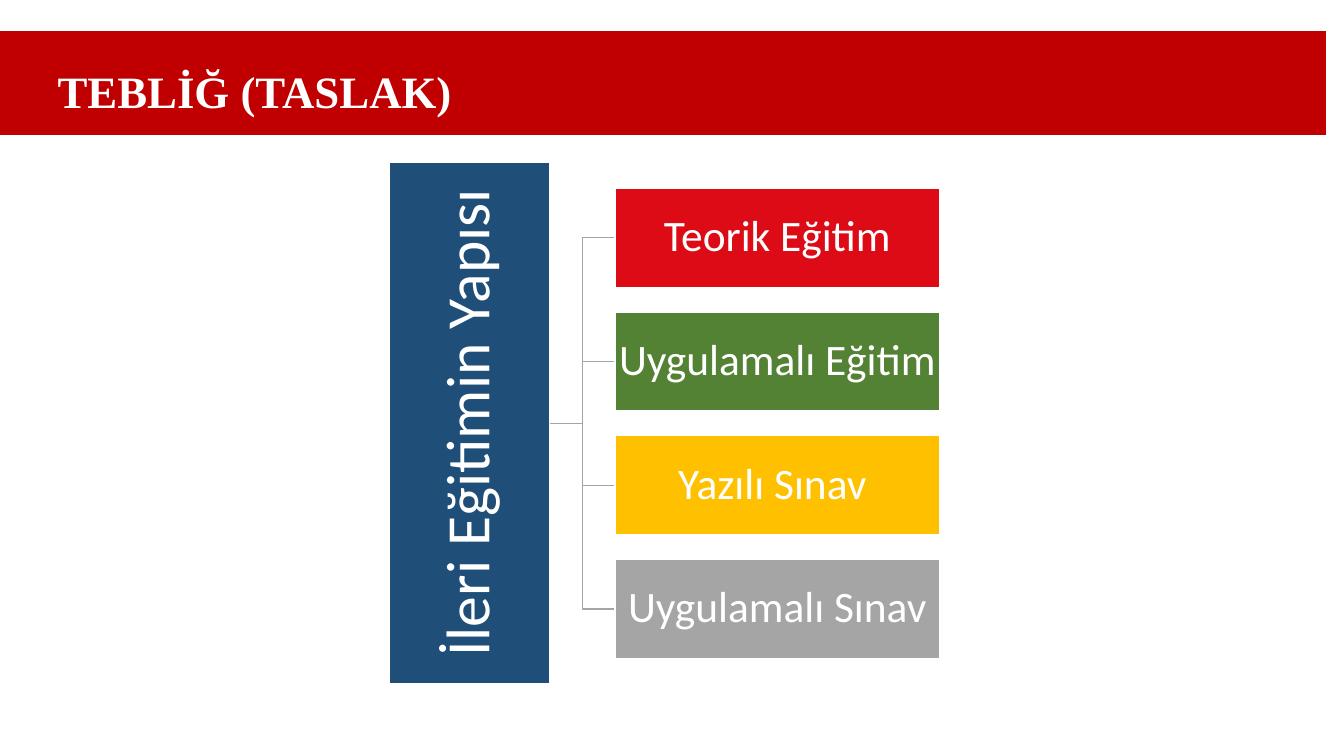
import pptx
import pptx.util
import pptx.dml.color
import pptx.enum.shapes
import pptx.enum.text
import pptx.oxml


def color(value):
    return pptx.dml.color.RGBColor.from_string(value)


class TrainingSlide:
    body_font = "Calibri"
    title_font = "Times New Roman"
    light = "FFFFFF"
    rule = "A5A5A5"

    def __init__(self, deck):
        self.column = deck.slide_width / 100
        self.row = deck.slide_height / 100
        self.slide = deck.slides.add_slide(deck.slide_layouts[5])

    def place(self, left, top, width, height):
        return (round(left * self.column), round(top * self.row),
                round(width * self.column), round(height * self.row))

    def label(self, shape, text, font, size, align, bold=False):
        frame = shape.text_frame
        frame.text = text
        frame.word_wrap = True
        frame.vertical_anchor = pptx.enum.text.MSO_ANCHOR.MIDDLE
        paragraph = frame.paragraphs[0]
        paragraph.alignment = align
        paragraph.line_spacing = 0.9
        paragraph.font.name = font
        paragraph.font.size = pptx.util.Pt(size)
        paragraph.font.bold = bold
        paragraph.font.color.rgb = color(self.light)

    def rectangle(self, area, fill):
        shape = self.slide.shapes.add_shape(
            pptx.enum.shapes.MSO_SHAPE.RECTANGLE, *self.place(*area))
        shape.shadow.inherit = False
        shape.fill.solid()
        shape.fill.fore_color.rgb = color(fill)
        shape.line.fill.background()
        return shape

    def title(self, text, area):
        heading = self.slide.shapes.title
        heading.left, heading.top, heading.width, heading.height = self.place(*area)
        self.label(heading, text, self.title_font, 32,
                   pptx.enum.text.PP_ALIGN.LEFT, bold=True)
        self.slide.shapes._spTree.append(heading._element)

    def box(self, text, area, fill, size, inset, rotation=0):
        shape = self.rectangle(area, fill)
        shape.rotation = rotation
        shape.line.color.rgb = color(self.light)
        shape.line.width = pptx.util.Pt(1)
        frame = shape.text_frame
        frame.margin_left = frame.margin_right = pptx.util.Inches(inset)
        frame.margin_top = frame.margin_bottom = pptx.util.Inches(inset)
        self.label(shape, text, self.body_font, size,
                   pptx.enum.text.PP_ALIGN.CENTER)

    def elbow(self, start, end):
        link = self.slide.shapes.add_connector(
            pptx.enum.shapes.MSO_CONNECTOR.ELBOW, *self.place(*start, *end))
        link.line.color.rgb = color(self.rule)
        link.line.width = pptx.util.Pt(1)
        effects = pptx.oxml.parse_xml(
            '<a:effectLst xmlns:a='
            '"http://schemas.openxmlformats.org/drawingml/2006/main"/>')
        link._element.spPr.append(effects)


def main():
    deck = pptx.Presentation()
    deck.slide_width = pptx.util.Inches(13.33)
    deck.slide_height = pptx.util.Inches(7.5)
    page = TrainingSlide(deck)

    page.rectangle((-1.35, 4.13, 100, 13.73), "C00000")
    page.title("TEBLİĞ (TASLAK)", (3.53, 3.47, 75.47, 18))

    branches = [
        ("Teorik Eğitim", "DC0B15"),
        ("Uygulamalı Eğitim", "548235"),
        ("Yazılı Sınav ", "FFC000"),
        ("Uygulamalı Sınav", "A5A5A5"),
    ]
    left, first_top, width, height, step = 45.75, 24.93, 24.15, 13.07, 16.36
    tops = [first_top + step * index for index in range(len(branches))]
    root_side = (40.9, 56)

    for top in reversed(tops):
        page.elbow(root_side, (left, top + height / 2))
    page.box("İleri Eğitimin Yapısı", (15.53, 45.33, 38.78, 21.2),
             "1F4E79", 44, 0.03, rotation=270)
    for top, (text, fill) in zip(tops, branches):
        page.box(text, (left, top, width, height), fill, 31, 0.02)

    deck.save("out.pptx")


if __name__ == "__main__":
    main()
